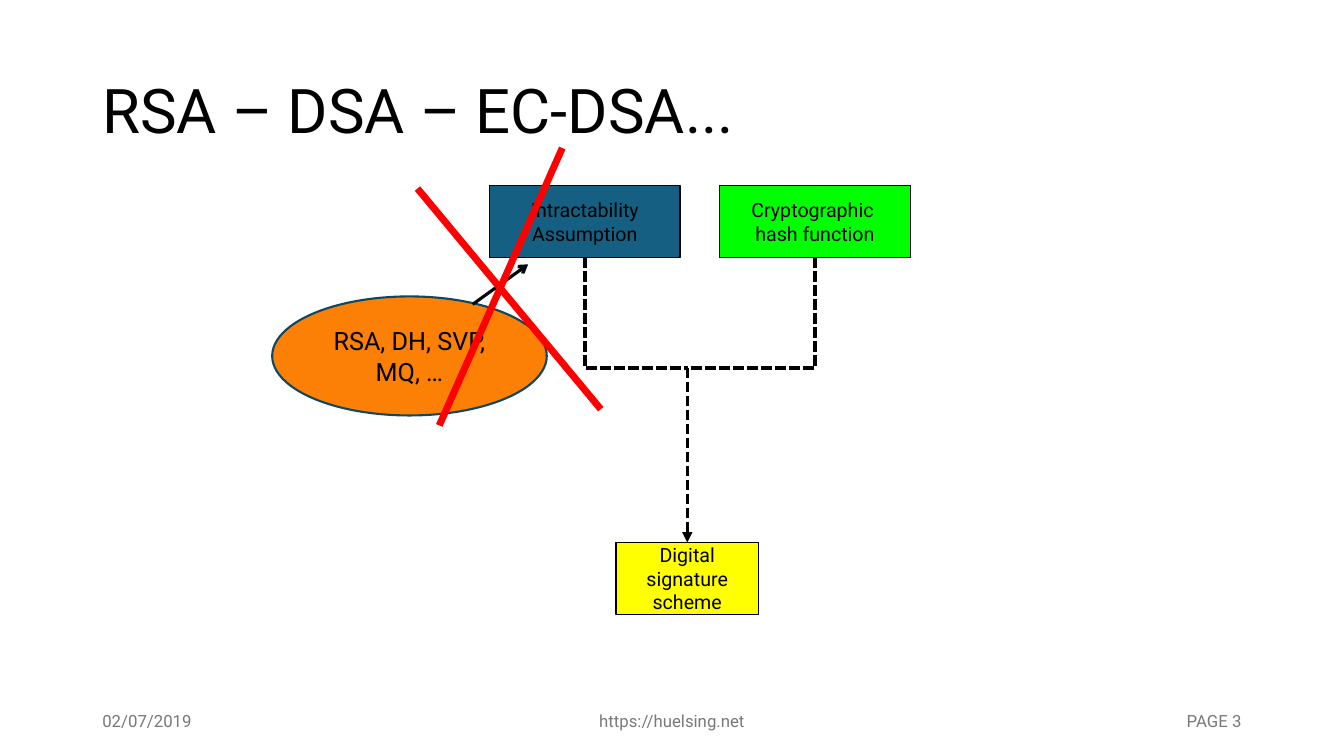
from lxml.etree import SubElement
from pptx import Presentation
from pptx.dml.color import RGBColor
from pptx.enum.dml import MSO_LINE
from pptx.enum.shapes import MSO_CONNECTOR, MSO_SHAPE
from pptx.enum.text import MSO_ANCHOR, PP_ALIGN
from pptx.oxml.ns import qn
from pptx.util import Cm, Pt

FONT = "Roboto"
COLORS = {
    "black": "000000", "gray": "797979", "blue": "156082", "green": "00FF00",
    "yellow": "FFFF00", "orange": "FB8005", "rim": "104760",
    "ink": "00090C", "red": "FF0000",
}

# Places are left, top, width, height in centimetres
TITLE = ("RSA – DSA – EC-DSA...", (2.33, 1.02, 29.21, 3.68))
FOOTER = [
    ("02/07/2019", 2.33, 7.62, PP_ALIGN.LEFT),
    ("https://huelsing.net", 11.22, 11.43, PP_ALIGN.CENTER),
    ("PAGE 3", 23.92, 7.62, PP_ALIGN.RIGHT),
]
FOOT_TOP, FOOT_H = 17.65, 1.02

BOX_TOP, BOX_W, BOX_H = 4.67, 4.8, 1.82
SOURCES = [
    ("Intractability Assumption", 12.34, "blue"),
    ("Cryptographic \vhash function", 18.14, "green"),
]
SCHEME = ("Digital signature scheme", (15.52, 13.67, 3.6, BOX_H), "yellow")
PROBLEMS = ("RSA, DH, SVP, MQ, …", (6.86, 7.47, 6.92, 3), "orange")
JOIN_Y = 9.27

# Lines are start x, start y, end x, end y
LINK = (11.91, 7.67, 13.31, 6.66)
CROSS = [(10.52, 4.75, 15.14, 10.31), (14.17, 3.73, 11.07, 10.72)]


def color(name):
    return RGBColor.from_string(COLORS[name])


def write(shape, text, size, tint="black", align=PP_ALIGN.CENTER):
    frame = shape.text_frame
    frame.word_wrap = True
    frame.vertical_anchor = MSO_ANCHOR.MIDDLE
    par = frame.paragraphs[0]
    par.text = text
    par.alignment = align
    par.font.name, par.font.size = FONT, Pt(size)
    par.font.color.rgb = color(tint)
    return par


def label(slide, text, place, size, tint, align):
    box = slide.shapes.add_textbox(*map(Cm, place))
    return write(box, text, size, tint, align)


def node(slide, kind, text, place, fill, size=14, rim="black", width=1):
    shape = slide.shapes.add_shape(kind, *map(Cm, place))
    shape.shadow.inherit = False
    shape.fill.solid()
    shape.fill.fore_color.rgb = color(fill)
    shape.line.color.rgb = color(rim)
    shape.line.width = Pt(width)
    write(shape, text, size)


def line(slide, ends, tint, width, head=None, dash=None,
         kind=MSO_CONNECTOR.STRAIGHT):
    link = slide.shapes.add_connector(kind, *map(Cm, ends))
    link.line.color.rgb = color(tint)
    link.line.width = Pt(width)
    if dash:
        link.line.dash_style = dash
    props = link._element.spPr
    if head:
        SubElement(props.find(qn("a:ln")), qn("a:tailEnd"), type=head)
    SubElement(props, qn("a:effectLst"))
    return link


def elbow(slide, x, top, join_x, join_y):
    """Run down from (x, top), then sideways to the join, by turning a bend."""
    drop, span = join_y - top, abs(join_x - x)
    left = (x + join_x - drop) / 2
    high = (top + join_y - span) / 2
    link = line(slide, (left, high, left + drop, high + span), "black", 2.5,
                dash=MSO_LINE.SQUARE_DOT, kind=MSO_CONNECTOR.ELBOW)
    props = link._element.spPr
    props.find(qn("a:prstGeom")).set("prst", "bentConnector2")
    turn = props.find(qn("a:xfrm"))
    if join_x > x:
        turn.set("flipH", "1")
    turn.set("rot", str((270 if join_x > x else 90) * 60000))


def main():
    deck = Presentation()
    deck.slide_width, deck.slide_height = Cm(33.87), Cm(19.05)
    slide = deck.slides.add_slide(deck.slide_layouts[6])

    title = label(slide, *TITLE, 44, "black", PP_ALIGN.LEFT)
    title.line_spacing = 0.9
    for text, left, width, align in FOOTER:
        place = (left, FOOT_TOP, width, FOOT_H)
        label(slide, text, place, 12, "gray", align)

    left, top, width, _ = SCHEME[1]
    mid = left + width / 2
    node(slide, MSO_SHAPE.RECTANGLE, *SCHEME)
    line(slide, (mid, JOIN_Y, mid, top), "black", 2.5, "triangle",
         MSO_LINE.SQUARE_DOT)
    for text, left, fill in SOURCES:
        place = (left, BOX_TOP, BOX_W, BOX_H)
        node(slide, MSO_SHAPE.RECTANGLE, text, place, fill)
        elbow(slide, left + BOX_W / 2, BOX_TOP + BOX_H, mid, JOIN_Y)

    node(slide, MSO_SHAPE.OVAL, *PROBLEMS, size=18, rim="rim", width=1.5)
    line(slide, LINK, "ink", 2.25, "arrow")
    for ends in CROSS:
        line(slide, ends, "red", 5)

    deck.save("out.pptx")


if __name__ == "__main__":
    main()
